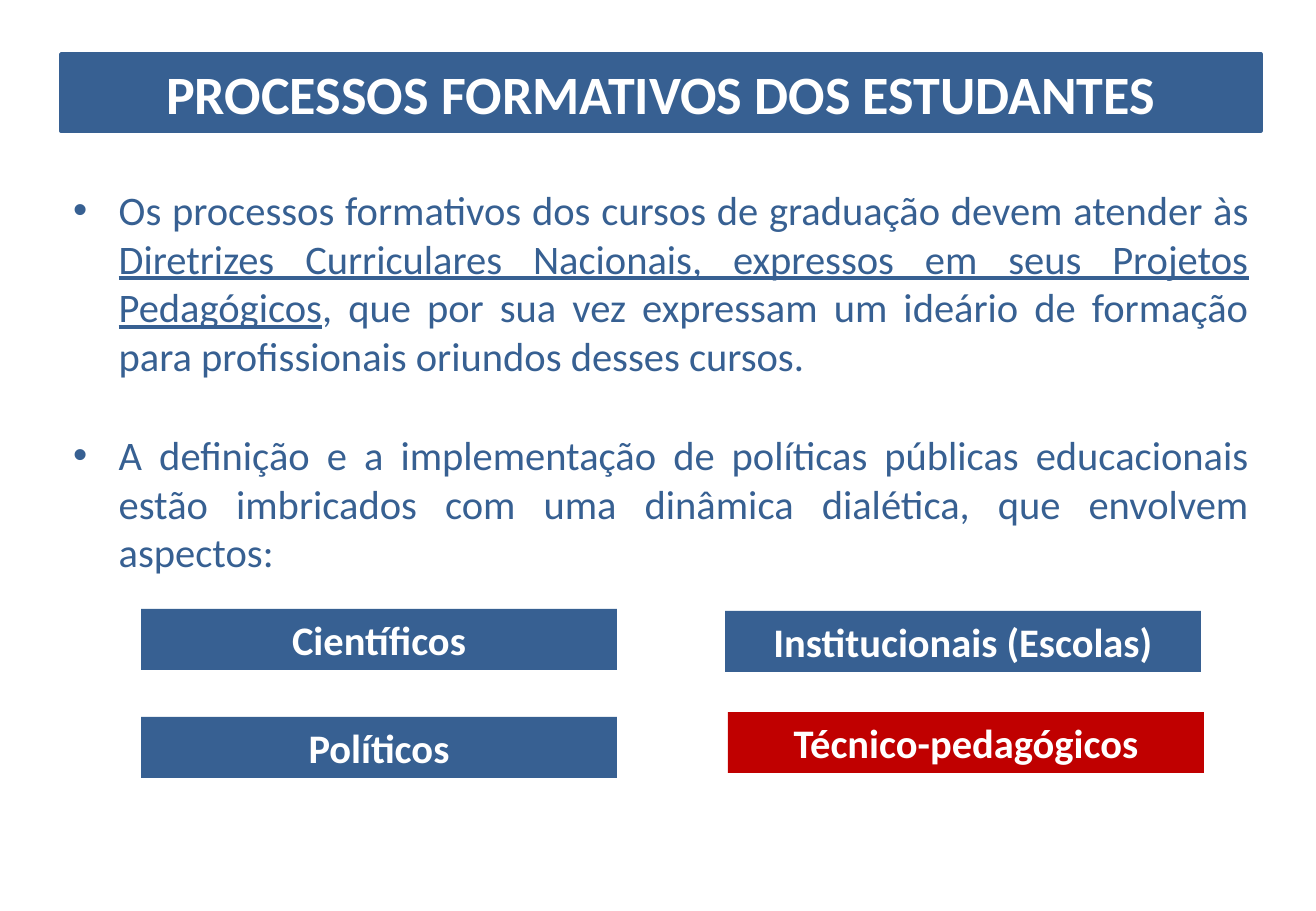
import pptx
import pptx.dml.color
import pptx.enum.shapes
import pptx.enum.text
import pptx.util

BLUE = pptx.dml.color.RGBColor(0x37, 0x60, 0x92)
RED = pptx.dml.color.RGBColor(0xC0, 0x00, 0x00)
WHITE = pptx.dml.color.RGBColor(0xFF, 0xFF, 0xFF)

PARAGRAPHS = [
    [
        ("Os processos formativos dos cursos de graduação devem atender às ", False),
        ("Diretrizes Curriculares Nacionais, expressos em seus Projetos Pedagógicos", True),
        (", que por sua vez expressam um ideário de formação para profissionais "
         "oriundos desses cursos.", False),
    ],
    [
        ("A definição e a implementação de políticas públicas educacionais estão "
         "imbricados com uma dinâmica dialética, que envolvem aspectos:", False),
    ],
]
ASPECTS = [
    ("Científicos", 141, 609, BLUE),
    ("Políticos", 141, 717, BLUE),
    ("Institucionais (Escolas)", 725, 611, BLUE),
    ("Técnico-pedagógicos", 728, 712, RED),
]


class SlideBuilder:
    """Hold the deck style and the current page, and add elements to it."""

    scale = 7526
    font_name = "Calibri"

    def __init__(self, width, height):
        self.deck = pptx.Presentation()
        self.deck.slide_width = self.emu(width)
        self.deck.slide_height = self.emu(height)
        self.page = self.deck.slides.add_slide(self.deck.slide_layouts[1])

    def emu(self, pixels):
        return pptx.util.Emu(pixels * self.scale)

    def place(self, shape, left, top, width, height):
        shape.left, shape.top = self.emu(left), self.emu(top)
        shape.width, shape.height = self.emu(width), self.emu(height)

    def style(self, font, size, color, bold=False):
        font.name = self.font_name
        font.size = pptx.util.Pt(size)
        font.bold = bold
        font.color.rgb = color

    def label(self, shape, text, size, fill):
        shape.fill.solid()
        shape.fill.fore_color.rgb = fill
        frame = shape.text_frame
        frame.text = text
        frame.word_wrap = True
        frame.auto_size = pptx.enum.text.MSO_AUTO_SIZE.NONE
        frame.vertical_anchor = pptx.enum.text.MSO_ANCHOR.MIDDLE
        para = frame.paragraphs[0]
        para.alignment = pptx.enum.text.PP_ALIGN.CENTER
        self.style(para.runs[0].font, size, WHITE, bold=True)

    def title(self, text, *area):
        title = self.page.shapes.title
        self.place(title, *area)
        self.label(title, text, 32, BLUE)
        title.line.color.rgb = BLUE
        title.line.width = pptx.util.Pt(2)

    def body(self, paragraphs, *area):
        body = self.page.placeholders[1]
        self.place(body, *area)
        frame = body.text_frame
        frame.auto_size = pptx.enum.text.MSO_AUTO_SIZE.NONE
        for index, pieces in enumerate(paragraphs):
            para = frame.add_paragraph() if index else frame.paragraphs[0]
            para.alignment = pptx.enum.text.PP_ALIGN.JUSTIFY
            para.space_before = pptx.util.Pt(30 if index else 0)
            for text, underlined in pieces:
                span = para.add_run()
                span.text = text
                self.style(span.font, 24, BLUE)
                span.font.underline = underlined

    def box(self, text, left, top, fill):
        area = [self.emu(pixels) for pixels in (left, top, 476, 61)]
        box = self.page.shapes.add_shape(pptx.enum.shapes.MSO_SHAPE.RECTANGLE, *area)
        box.shadow.inherit = False
        box.line.fill.background()
        self.label(box, text, 24, fill)


def main():
    builder = SlideBuilder(1316, 911)
    builder.title("PROCESSOS FORMATIVOS DOS ESTUDANTES", 61, 54, 1200, 77)
    builder.body(PARAGRAPHS, 61, 179, 1200, 622)
    for aspect in ASPECTS:
        builder.box(*aspect)
    builder.deck.save("out.pptx")


if __name__ == "__main__":
    main()
